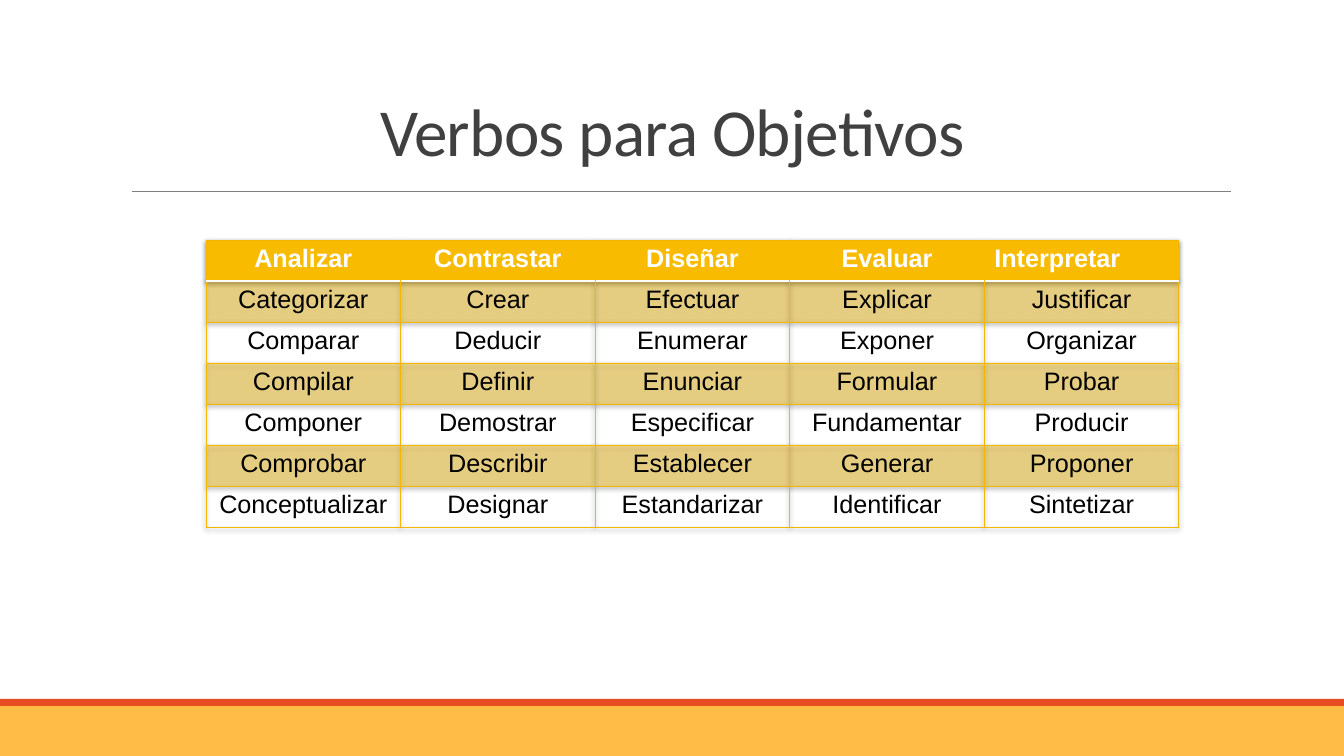
from lxml import etree
from pptx import Presentation
from pptx.dml.color import RGBColor
from pptx.enum.shapes import MSO_CONNECTOR, MSO_SHAPE
from pptx.enum.text import MSO_ANCHOR, PP_ALIGN
from pptx.oxml.ns import qn
from pptx.util import Pt

RECT = MSO_SHAPE.RECTANGLE
STRAIGHT = MSO_CONNECTOR.STRAIGHT
LEFT, CENTER = PP_ALIGN.LEFT, PP_ALIGN.CENTER
BOTTOM = MSO_ANCHOR.BOTTOM

EMU_PER_PX = 914400 / 100.8
COLORS = {
    "band": "FFBD47", "stripe": "E84C22", "rule": "808080", "title": "404040",
    "gold": "F8BB00", "border": "F3B700", "white": "FFFFFF", "black": "000000",
}

# Cell borders: colour and width in points
THIN = ("border", 0.75)
THICK = ("white", 2)
NO_LINE = (None, 0)

VERBS = [
    ["Analizar", "Contrastar", "Diseñar", "Evaluar", "Interpretar"],
    ["Categorizar", "Crear", "Efectuar", "Explicar", "Justificar"],
    ["Comparar", "Deducir", "Enumerar", "Exponer", "Organizar"],
    ["Compilar", "Definir", "Enunciar", "Formular", "Probar"],
    ["Componer", "Demostrar", "Especificar", "Fundamentar", "Producir"],
    ["Comprobar", "Describir", "Establecer", "Generar", "Proponer"],
    ["Conceptualizar", "Designar", "Estandarizar", "Identificar", "Sintetizar"],
]
LEFT_ALIGNED = "Interpretar"


def px(n):
    return round(n * EMU_PER_PX)


def rgb(name):
    return RGBColor.from_string(COLORS[name])


def sub(parent, tag, **attrs):
    return etree.SubElement(parent, qn(tag), **attrs)


def add_color(parent, color, opacity=100):
    """Append a colour to an XML fill or effect; opacity is in percent."""
    clr = sub(parent, "a:srgbClr", val=COLORS[color])
    if opacity < 100:
        sub(clr, "a:alpha", val=str(opacity * 1000))


def add_bar(s, x, y, w, h, color):
    bar = s.shapes.add_shape(RECT, px(x), px(y), px(w), px(h))
    bar.shadow.inherit = False
    bar.fill.solid()
    bar.fill.fore_color.rgb = rgb(color)
    bar.line.fill.background()


def add_rule(s, x1, x2, y):
    rule = s.shapes.add_connector(STRAIGHT, px(x1), px(y), px(x2), px(y))
    rule.line.color.rgb = rgb("rule")
    rule.line.width = Pt(0.5)
    sub(rule._element.spPr, "a:effectLst")


def add_title(s, text, x, y, w, h):
    tf = s.shapes.add_textbox(px(x), px(y), px(w), px(h)).text_frame
    tf.word_wrap = True
    tf.vertical_anchor = BOTTOM
    p = tf.paragraphs[0]
    p.alignment = CENTER
    p.line_spacing = 0.85
    p.font.name = "Calibri"
    p.font.size = Pt(48)
    p.font.color.rgb = rgb("title")
    r = p.add_run()
    r.text = text
    r.font._element.set("spc", "-50")


def set_borders(tc_pr, row, is_first, is_last):
    """Draw a grid, with an open header row above a thick white line."""
    header = row == 0
    borders = {
        "a:lnL": NO_LINE if header and not is_first else THIN,
        "a:lnR": NO_LINE if header and not is_last else THIN,
        "a:lnT": THICK if row == 1 else THIN,
        "a:lnB": THICK if header else THIN,
    }
    for tag, (color, width) in borders.items():
        ln = sub(tc_pr, tag, w=str(Pt(width)))
        if color:
            add_color(sub(ln, "a:solidFill"), color)
        else:
            sub(ln, "a:noFill")


def set_cell_fill(tc_pr, row):
    """Solid header, then translucent odd rows and clear even rows."""
    if row == 0:
        add_color(sub(tc_pr, "a:solidFill"), "gold")
    elif row % 2:
        add_color(sub(tc_pr, "a:solidFill"), "gold", opacity=40)
    else:
        sub(tc_pr, "a:noFill")


def set_cell_text(cell, verb, header):
    cell.text = verb
    p = cell.text_frame.paragraphs[0]
    p.alignment = LEFT if verb == LEFT_ALIGNED else CENTER
    p.font.name = "Arial"
    p.font.size = Pt(18)
    p.font.bold = header
    p.font.color.rgb = rgb("white" if header else "black")


def add_table_shadow(table):
    tbl_pr = table._tbl.tblPr
    effects = sub(tbl_pr, "a:effectLst")
    shadow = sub(effects, "a:outerShdw", blurRad="40000", dist="20000",
                 dir="5400000", rotWithShape="0")
    add_color(shadow, "black", opacity=38)
    tbl_pr.insert(0, effects)  # effects must precede the style id


def add_verb_table(s, x, y, w, row_h):
    rows, cols = len(VERBS), len(VERBS[0])
    table = s.shapes.add_table(rows, cols, px(x), px(y), px(w),
                               px(row_h * rows)).table
    for row, verbs in enumerate(VERBS):
        for col, verb in enumerate(verbs):
            cell = table.cell(row, col)
            tc_pr = cell._tc.get_or_add_tcPr()
            # Borders must precede the fill
            set_borders(tc_pr, row, col == 0, col == cols - 1)
            set_cell_fill(tc_pr, row)
            set_cell_text(cell, verb, header=row == 0)
    add_table_shadow(table)


def main():
    prs = Presentation()
    prs.slide_width, prs.slide_height = px(1344), px(756)
    s = prs.slides.add_slide(prs.slide_layouts[6])

    # Footer bands
    add_bar(s, 0, 706, 1344, 50, "band")
    add_bar(s, 0, 699, 1344, 7, "stripe")

    # Heading
    add_rule(s, 132, 1231, 191)
    add_title(s, "Verbos para Objetivos", 118, 67, 1109, 108)

    # Verbs
    add_verb_table(s, 206, 240, 973, 41)

    prs.save("out.pptx")


if __name__ == "__main__":
    main()
